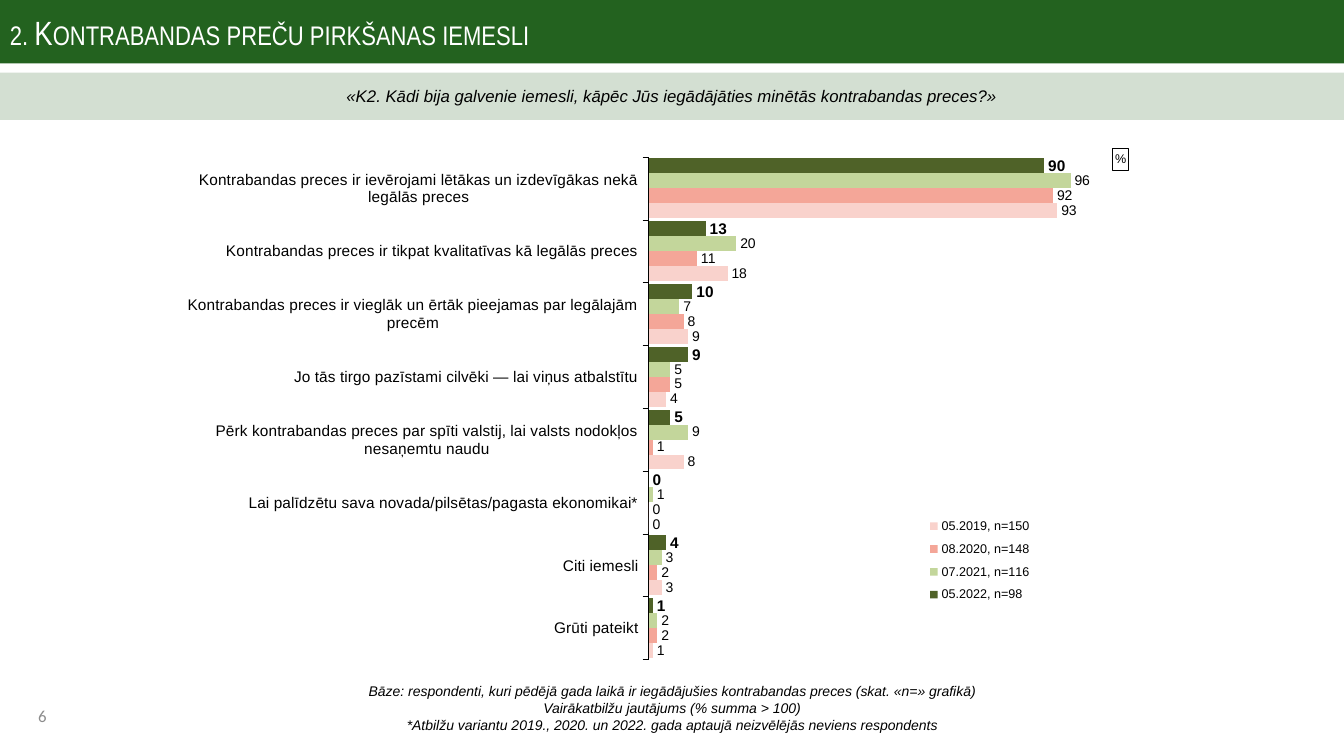
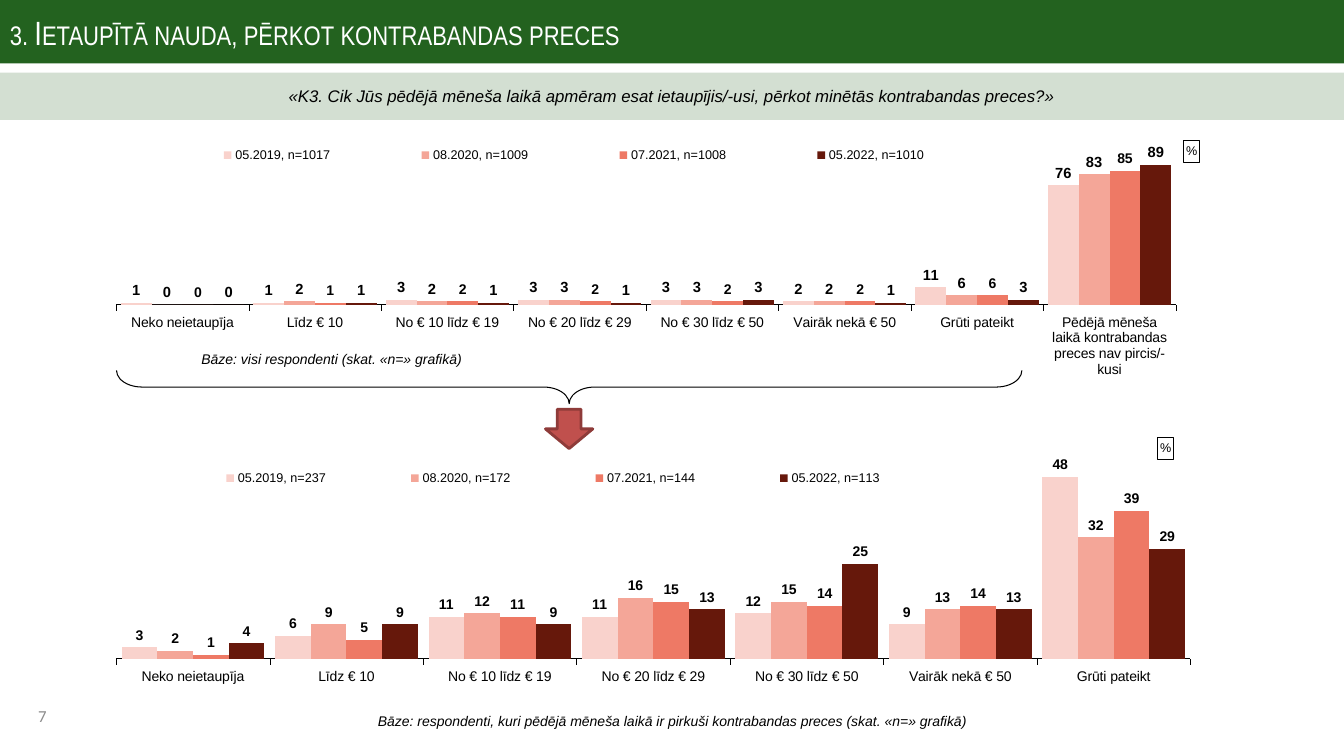
from pptx import Presentation
from pptx.chart.data import CategoryChartData
from pptx.dml.color import RGBColor
from pptx.enum.chart import XL_CHART_TYPE, XL_LABEL_POSITION, XL_LEGEND_POSITION, XL_TICK_MARK
from pptx.enum.shapes import MSO_SHAPE
from pptx.enum.text import MSO_ANCHOR, PP_ALIGN
from pptx.oxml import parse_xml
from pptx.oxml.ns import nsdecls, qn
from pptx.util import Inches, Pt

BAR, COLUMN = XL_CHART_TYPE.BAR_CLUSTERED, XL_CHART_TYPE.COLUMN_CLUSTERED
RIGHT, LEFT = XL_LEGEND_POSITION.RIGHT, XL_LEGEND_POSITION.LEFT
OUTSIDE_END = XL_LABEL_POSITION.OUTSIDE_END
TICK_OUT = XL_TICK_MARK.OUTSIDE
TOP, MIDDLE = MSO_ANCHOR.TOP, MSO_ANCHOR.MIDDLE
ALIGN_LEFT, CENTER = PP_ALIGN.LEFT, PP_ALIGN.CENTER
RECT, BRACE, ARROW = MSO_SHAPE.RECTANGLE, MSO_SHAPE.RIGHT_BRACE, MSO_SHAPE.DOWN_ARROW

rgb = RGBColor.from_string
GREEN, BLACK, WHITE, GRAY = "23621F", "000000", "FFFFFF", "8C8C8C"
OLIVE, LIME = "4F6228", "C3D69B"
PINK, SALMON, CORAL, MAROON = "F9D2CC", "F4A698", "EE7965", "66180B"
REDS = [PINK, SALMON, CORAL, MAROON]
WIDTH = 13.33


def add_text(s, text, x, y, w, h, size=10, font="Arial", color=BLACK, italic=False,
             small_caps=False, align=CENTER, anchor=MIDDLE, fill=None, alpha=None):
    """Add a text box, or a filled band when fill is given; one paragraph per line."""
    box = Inches(x), Inches(y), Inches(w), Inches(h)
    if fill:
        sp = s.shapes.add_shape(RECT, *box)
        sp.shadow.inherit = False
        sp.line.fill.background()
        sp.fill.solid()
        sp.fill.fore_color.rgb = rgb(fill)
        if alpha:
            clr = sp.fill._xPr.find(".//" + qn("a:srgbClr"))
            clr.append(parse_xml(f'<a:alpha {nsdecls("a")} val="{alpha * 1000}"/>'))
    else:
        sp = s.shapes.add_textbox(*box)
    tf = sp.text_frame
    tf.word_wrap = True
    tf.vertical_anchor = anchor
    for i, line in enumerate(text.split("\n")):
        p = tf.add_paragraph() if i else tf.paragraphs[0]
        p.alignment = align
        r = p.add_run()
        r.text = line
        r.font.size, r.font.name, r.font.italic = Pt(size), font, italic
        r.font.color.rgb = rgb(color)
        if small_caps:
            r._r.get_or_add_rPr().set("cap", "small")


def add_chart(s, kind, x, y, w, h, cats, series, top, gap, cat_size, fmt,
              legend_pos, plot_box, legend_box, title_at):
    """Add a clustered chart; series rows are name, values, colour, label size, bold."""
    data = CategoryChartData(number_format=fmt)
    data.categories = cats
    for name, values, *_ in series:
        data.add_series(name, values)
    chart = s.shapes.add_chart(kind, Inches(x), Inches(y), Inches(w), Inches(h), data).chart
    chart.font.size, chart.font.name = Pt(9), "Arial"
    chart.font.color.rgb = rgb(BLACK)

    # Axes
    axis = chart.category_axis
    axis.major_tick_mark = TICK_OUT
    axis.reverse_order = kind == BAR
    axis.tick_labels.font.size = Pt(cat_size)
    axis.format.line.width = Pt(0.25)
    axis.format.line.color.rgb = rgb(BLACK)
    val = chart.value_axis
    val.minimum_scale, val.maximum_scale, val.major_unit = 0, top, 20
    val.has_major_gridlines = False
    val.visible = False

    # Series and labels
    plot = chart.plots[0]
    plot.gap_width, plot.overlap, plot.vary_by_categories = gap, 0, False
    for ser, (_, _, color, size, bold) in zip(plot.series, series):
        ser.format.fill.solid()
        ser.format.fill.fore_color.rgb = rgb(color)
        ser.invert_if_negative = False
        labels = ser.data_labels
        labels.show_value = True
        labels.number_format, labels.number_format_is_linked = fmt, False
        labels.position = OUTSIDE_END
        labels.font.size, labels.font.bold = Pt(size), bold

    # Legend and framed unit title
    chart.has_legend = True
    chart.legend.position = legend_pos
    chart.legend.include_in_layout = False
    chart.legend.font.size = Pt(9)
    chart.has_title = True
    title = chart.chart_title
    r = title.text_frame.paragraphs[0].add_run()
    r.text = "%"
    r.font.size, r.font.bold = Pt(9), False
    title.format.line.width = Pt(0.75)
    title.format.line.color.rgb = rgb(BLACK)

    # Manual layouts, as fractions of the chart
    for tag, box in (("plotArea", plot_box), ("legend", legend_box), ("title", title_at)):
        el = chart.element.find(f"{qn('c:chart')}/{qn('c:' + tag)}")
        for old in el.findall(qn("c:layout")):
            el.remove(old)
        target = '<c:layoutTarget val="inner"/>' if tag == "plotArea" else ""
        modes = '<c:xMode val="edge"/><c:yMode val="edge"/>'
        sizes = "".join(f'<c:{k} val="{v}"/>' for k, v in zip("xywh", box))
        layout = parse_xml(f'<c:layout {nsdecls("c")}><c:manualLayout>{target}{modes}{sizes}'
                           "</c:manualLayout></c:layout>")
        overlay = el.find(qn("c:overlay"))
        if overlay is None:
            el.insert(0, layout)
        else:
            overlay.addprevious(layout)
            if tag == "title":
                overlay.set("val", "1")


prs = Presentation()
prs.slide_width, prs.slide_height = Inches(WIDTH), Inches(7.5)

# Shared frame: title band, question band, base note, page number
pages = [
    (6, "2. Kontrabandas preču pirkšanas iemesli",
     "«K2. Kādi bija galvenie iemesli, kāpēc Jūs iegādājāties minētās kontrabandas preces?»",
     "Bāze: respondenti, kuri pēdējā gada laikā ir iegādājušies kontrabandas preces "
     "(skat. «n=» grafikā)\n"
     "Vairākatbilžu jautājums (% summa > 100)\n"
     "*Atbilžu variantu 2019., 2020. un 2022. gada aptaujā neizvēlējās neviens respondents", 6.79),
    (7, "3. Ietaupītā nauda, pērkot kontrabandas preces",
     "«K3. Cik Jūs pēdējā mēneša laikā apmēram esat ietaupījis/-usi, "
     "pērkot minētās kontrabandas preces?»",
     "Bāze: respondenti, kuri pēdējā mēneša laikā ir pirkuši kontrabandas preces "
     "(skat. «n=» grafikā)", 6.92),
]
slides = []
for number, heading, question, note, note_top in pages:
    s = prs.slides.add_slide(prs.slide_layouts[6])
    add_text(s, str(number), 0.28, 6.95, 1.42, 0.4, size=12, font="Calibri", color=GRAY,
             align=ALIGN_LEFT, anchor=TOP)
    add_text(s, heading, 0, 0, WIDTH, 0.63, size=24, font="Arial Narrow", color=WHITE,
             small_caps=True, align=ALIGN_LEFT, fill=GREEN)
    add_text(s, question, 0, 0.72, WIDTH, 0.47, size=12, italic=True, fill=GREEN, alpha=20)
    add_text(s, note, 0, note_top, WIDTH, 0.47, italic=True)
    slides.append(s)
reasons, savings = slides

# Slide 1: reasons for buying
reason_cats = [
    "Kontrabandas preces ir ievērojami lētākas un izdevīgākas nekā legālās preces",
    "Kontrabandas preces ir tikpat kvalitatīvas kā legālās preces",
    "Kontrabandas preces ir vieglāk un ērtāk pieejamas par legālajām precēm",
    "Jo tās tirgo pazīstami cilvēki — lai viņus atbalstītu",
    "Pērk kontrabandas preces par spīti valstij, lai valsts nodokļos nesaņemtu naudu",
    "Lai palīdzētu sava novada/pilsētas/pagasta ekonomikai*",
    "Citi iemesli",
    "Grūti pateikt",
]
reason_series = [
    ("05.2022, n=98", [90, 13, 10, 9, 5, 0, 4, 1], OLIVE, 11, True),
    ("07.2021, n=116", [96, 20, 7, 5, 9, 1, 3, 2], LIME, 10, False),
    ("08.2020, n=148", [92, 11, 8, 5, 1, 0, 2, 2], SALMON, 10, False),
    ("05.2019, n=150", [93, 18, 9, 4, 8, 0, 3, 1], PINK, 10, False),
]
add_chart(reasons, BAR, 1.86, 1.39, 9.61, 5.2, reason_cats, reason_series, top=110, gap=20,
          cat_size=11, fmt="0", legend_pos=RIGHT, plot_box=(0.474, 0.032, 0.501, 0.959),
          legend_box=(0.752, 0.707, 0.13, 0.19), title_at=(0.955, 0.016))

# Slide 2: money saved, all respondents above and buyers below
saving_cats = ["Neko neietaupīja", "Līdz € 10", "No € 10 līdz € 19", "No € 20 līdz € 29",
               "No € 30 līdz € 50", "Vairāk nekā € 50", "Grūti pateikt"]
not_bought = "Pēdējā mēneša laikā kontrabandas preces nav pircis/-kusi"
waves = ["05.2019", "08.2020", "07.2021", "05.2022"]
saving_charts = [
    dict(y=1.31, h=2.69, cats=saving_cats + [not_bought], top=100,
         n=[1017, 1009, 1008, 1010], sizes=[10.5, 10.5, 10, 10.5],
         rows=[[1, 1, 3, 3, 3, 2, 11, 76], [0, 2, 2, 3, 3, 2, 6, 83],
               [0, 1, 2, 2, 2, 2, 6, 85], [0, 1, 1, 1, 3, 1, 3, 89]],
         plot_box=(0.028, 0.057, 0.94, 0.58), legend_box=(0.046, 0.035, 0.776, 0.1),
         title_at=(0.975, 0.031)),
    dict(y=4.23, h=2.9, cats=saving_cats, top=60,
         n=[237, 172, 144, 113], sizes=[10] * 4,
         rows=[[3, 6, 11, 11, 12, 9, 48], [2, 9, 12, 16, 15, 13, 32],
               [1, 5, 11, 15, 14, 14, 39], [4, 9, 9, 13, 25, 13, 29]],
         plot_box=(0.028, 0.016, 0.953, 0.779), legend_box=(0.054, 0.127, 0.723, 0.1),
         title_at=(0.952, 0.037)),
]
for c in saving_charts:
    series = [(f"{wave}, n={n}", row, color, size, True) for wave, n, row, color, size
              in zip(waves, c.pop("n"), c.pop("rows"), REDS, c.pop("sizes"))]
    add_chart(savings, COLUMN, x=0.84, w=11.18, series=series, gap=30, cat_size=10, fmt="0",
              legend_pos=LEFT, **c)

# Brace and arrow leading from all respondents to buyers
brace = savings.shapes.add_shape(BRACE, Inches(5.48), Inches(-0.65), Inches(0.33), Inches(8.98))
brace.rotation = 90
brace.adjustments[0], brace.adjustments[1] = 0.77, 0.5
brace.fill.background()
arrow = savings.shapes.add_shape(ARROW, Inches(5.41), Inches(4.06), Inches(0.47), Inches(0.39))
arrow.fill.solid()
arrow.fill.fore_color.rgb = rgb("C0504D")
for sp, color, width in ((brace, BLACK, 0.75), (arrow, "8E3B39", 2)):
    sp.shadow.inherit = False
    sp.line.color.rgb = rgb(color)
    sp.line.width = Pt(width)
add_text(savings, "Bāze: visi respondenti (skat. «n=» grafikā)", 1.9, 3.33, 9.76, 0.47,
         italic=True, align=ALIGN_LEFT)

prs.save("out.pptx")
